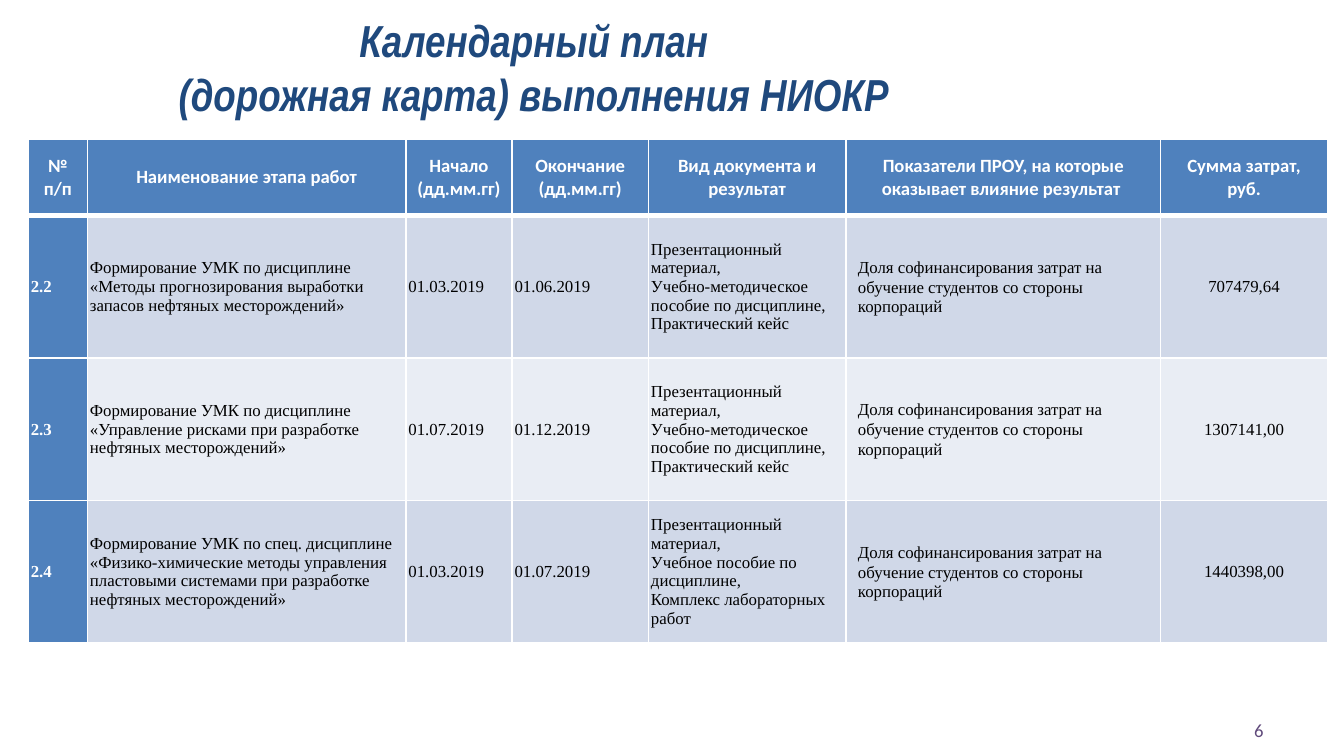
from dataclasses import dataclass

from pptx import Presentation
from pptx import util as u
from pptx.dml.color import RGBColor
from pptx.enum import text
from pptx.oxml import parse_xml
from pptx.oxml.ns import nsdecls

PX = 4572  # 200 px to the inch
COLORS = {"navy": "1F497D", "blue": "4F81BD", "band": "D0D8E8", "pale": "E9EDF4",
          "white": "FFFFFF", "black": "000000", "purple": "604A7B"}
LEFT, CENTER, RIGHT = text.PP_ALIGN.LEFT, text.PP_ALIGN.CENTER, text.PP_ALIGN.RIGHT
MIDDLE = text.MSO_ANCHOR.MIDDLE


@dataclass
class Style:
    name: str
    size: int
    color: str
    bold: bool = False
    italic: bool = False
    align: int = LEFT


@dataclass
class Stage:
    number: str
    name: str
    start: str
    end: str
    documents: str
    cost: str


TITLE = Style("Arial Narrow", 24, "navy", True, True, CENTER)
PAGE = Style("Calibri", 10, "purple", align=RIGHT)
HEADER = Style("Calibri", 10, "white", True, align=CENTER)
NUMBER = Style("Times New Roman", 9, "white", True)
BODY = Style("Times New Roman", 9, "black")
COST = Style("Times New Roman", 9, "black", align=CENTER)

COLUMNS = [88, 474, 158, 203, 294, 468, 249]
ROWS = [114, 212, 212, 212]
HEADINGS = ["№ п/п", "Наименование этапа работ", "Начало\n(дд.мм.гг)",
            "Окончание\n(дд.мм.гг)", "Вид документа и результат",
            "Показатели ПРОУ, на которые оказывает влияние результат ",
            "Сумма затрат, руб."]
INDICATOR = "Доля софинансирования затрат на обучение студентов со стороны корпораций"
INDICATOR_COLUMN = 5
COURSE_KIT = ("Презентационный материал,\nУчебно-методическое пособие по дисциплине,\n"
              "Практический кейс")
LAB_KIT = ("Презентационный материал,\nУчебное пособие по дисциплине,\n"
           "Комплекс лабораторных работ")
STAGES = [
    Stage("2.2", "Формирование УМК по дисциплине «Методы прогнозирования выработки "
          "запасов нефтяных месторождений»", "01.03.2019", "01.06.2019", COURSE_KIT, "707479,64"),
    Stage("2.3", "Формирование УМК по дисциплине «Управление рисками при разработке "
          "нефтяных месторождений»", "01.07.2019", "01.12.2019", COURSE_KIT, "1307141,00"),
    Stage("2.4", "Формирование УМК по спец. дисциплине «Физико-химические методы управления "
          "пластовыми системами при разработке нефтяных месторождений»",
          "01.03.2019", "01.07.2019", LAB_KIT, "1440398,00"),
]


def rgb(color: str) -> RGBColor:
    return RGBColor.from_string(COLORS[color])


def set_attributes(target, values: dict) -> None:
    for key, value in values.items():
        setattr(target, key, value)


def write(frame, content: str, style: Style) -> None:
    """Fill a text frame; each newline starts a paragraph, each \\v breaks a line."""
    frame.text = content
    for paragraph in frame.paragraphs:
        paragraph.alignment = style.align
        for run in paragraph.runs:
            set_attributes(run.font, {"name": style.name, "size": u.Pt(style.size),
                                      "bold": style.bold, "italic": style.italic})
            run.font.color.rgb = rgb(style.color)


def place(shape, left: int, top: int, width: int, height: int) -> None:
    set_attributes(shape, {"left": left * PX, "top": top * PX,
                           "width": width * PX, "height": height * PX})


def add_borders(cell, widths: dict) -> None:
    properties = cell._tc.get_or_add_tcPr()
    for side, points in widths.items():
        properties.append(parse_xml(
            f'<a:ln{side} {nsdecls("a")} w="{u.Pt(points)}"><a:solidFill>'
            f'<a:srgbClr val="{COLORS["white"]}"/></a:solidFill></a:ln{side}>'))


def draw_cell(cell, content: str, style: Style, fill: str, inset: int, borders: dict) -> None:
    write(cell.text_frame, content, style)
    set_attributes(cell, {"vertical_anchor": MIDDLE, "margin_left": inset * PX,
                          "margin_right": inset * PX, "margin_top": 0, "margin_bottom": 0})
    add_borders(cell, borders)
    cell.fill.solid()
    cell.fill.fore_color.rgb = rgb(fill)


def draw_table(slide) -> None:
    frame = slide.shapes.add_table(len(ROWS), len(COLUMNS), 42 * PX, 207 * PX,
                                   sum(COLUMNS) * PX, sum(ROWS) * PX)
    table = frame.table
    for column, width in zip(table.columns, COLUMNS):
        column.width = width * PX
    for row, height in zip(table.rows, ROWS):
        row.height = height * PX

    # Header row, with a heavier line below it
    for index, heading in enumerate(HEADINGS):
        draw_cell(table.cell(0, index), heading, HEADER, "blue", 14,
                  {"L": 1, "R": 1, "T": 1, "B": 3})

    # One banded row for each stage
    styles = [NUMBER] + [BODY] * 5 + [COST]
    for row, stage in enumerate(STAGES, start=1):
        band = "band" if row % 2 else "pale"
        borders = {"L": 1, "R": 1, "T": 3 if row == 1 else 1, "B": 1}
        contents = [stage.number, stage.name, stage.start, stage.end,
                    stage.documents, INDICATOR, stage.cost]
        for index, (content, style) in enumerate(zip(contents, styles)):
            fill = "blue" if index == 0 else band
            draw_cell(table.cell(row, index), content, style, fill, 4, borders)
        paragraph = table.cell(row, INDICATOR_COLUMN).text_frame.paragraphs[0]
        paragraph.line_spacing = u.Pt(10.6)
        paragraph._p.get_or_add_pPr().set("marL", str(14 * PX))


def main() -> None:
    presentation = Presentation()
    set_attributes(presentation, {"slide_width": 2000 * PX, "slide_height": 1125 * PX})
    slide = presentation.slides.add_slide(presentation.slide_layouts[5])

    # Title
    title = slide.shapes.title
    place(title, -54, 54, 1712, 90)
    write(title.text_frame, "Календарный план \v(дорожная карта) выполнения НИОКР ", TITLE)
    set_attributes(title.text_frame, {"vertical_anchor": MIDDLE, "word_wrap": True,
                                      "auto_size": text.MSO_AUTO_SIZE.NONE})

    # Roadmap
    draw_table(slide)

    # Page number
    page = slide.shapes.add_textbox(0, 0, 0, 0)
    place(page, 1434, 1056, 466, 60)
    write(page.text_frame, "6", PAGE)
    set_attributes(page.text_frame, {"vertical_anchor": MIDDLE, "word_wrap": True})

    presentation.save("out.pptx")


if __name__ == "__main__":
    main()
